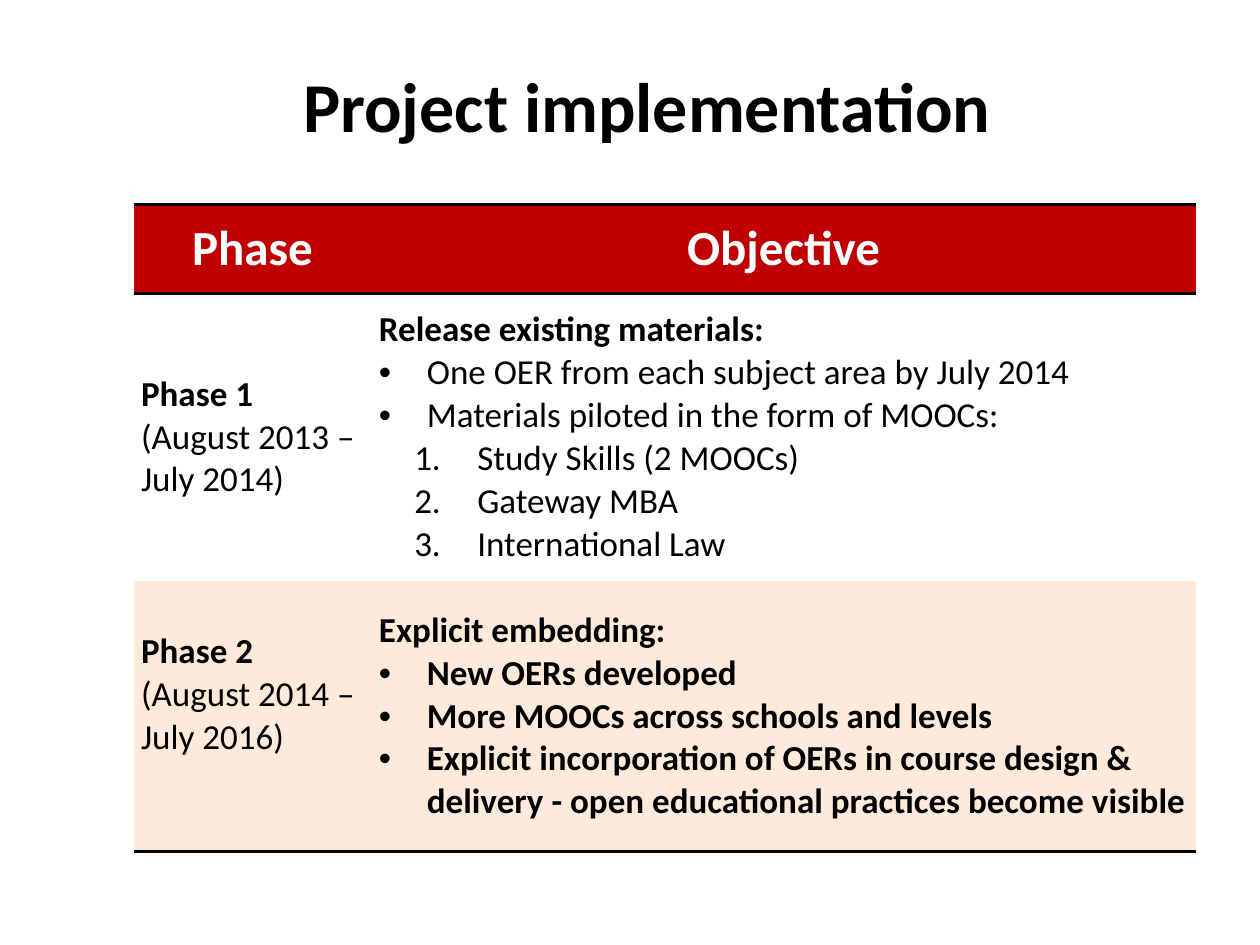
import pptx
import pptx.util
from lxml import etree
from pptx.dml.color import RGBColor
from pptx.enum.text import MSO_ANCHOR, PP_ALIGN
from pptx.oxml.ns import qn

W, H = 10, 7.5
FONT = "Calibri"
BLACK = RGBColor(0x00, 0x00, 0x00)
WHITE = RGBColor(0xFF, 0xFF, 0xFF)
RED = RGBColor(0xC0, 0x00, 0x00)
PEACH = RGBColor(0xFD, 0xEA, 0xDA)
NO_STYLE = "{2D5ABB26-0587-4C30-8999-92F81FD0307C}"

TITLE_BOX = (0.083 * W, 0.059 * H, 0.861 * W, 0.135 * H)
TABLE_BOX = (0.106 * W, 0.216 * H, 0.843 * W, 0.685 * H)
COL_SHARES = (0.224, 0.776)
ROW_SHARES = (0.138, 0.444, 0.418)
MARGINS = {"margin_left": 0.06, "margin_right": 0.06,
           "margin_top": 0.03, "margin_bottom": 0.03}
LINE = 0.34  # height of one body line

# List kind: (level, left indent, hanging indent, bullet tag, bullet attributes)
LISTS = {
    "bullet": (0, 0.38, 0.38, "a:buChar", {"char": "•"}),
    "number": (1, 0.78, 0.5, "a:buAutoNum", {"type": "arabicPeriod"}),
}

# Each paragraph: (text, bold, list kind)
HEADER = [[("Phase", True, None)], [("Objective", True, None)]]
PHASE_1 = [
    [("Phase 1", True, None), ("(August 2013 – July 2014)", False, None)],
    [("Release existing materials:", True, None),
     ("One OER from each subject area by July 2014", False, "bullet"),
     ("Materials piloted in the form of MOOCs:", False, "bullet"),
     ("Study Skills (2 MOOCs)", False, "number"),
     ("Gateway MBA", False, "number"),
     ("International Law", False, "number")],
]
PHASE_2 = [
    [("Phase 2", True, None), ("(August 2014 – July 2016)", False, None)],
    [("Explicit embedding:", True, None),
     ("New OERs developed", True, "bullet"),
     ("More MOOCs across schools and levels", True, "bullet"),
     ("Explicit incorporation of OERs in course design & delivery - "
      "open educational practices become visible", True, "bullet")],
]

# Each row: (cells, fill, text size, text colour, alignment, ruled sides)
ROWS = [
    (HEADER, RED, 28, WHITE, PP_ALIGN.CENTER, ("a:lnT", "a:lnB")),
    (PHASE_1, WHITE, 20, BLACK, PP_ALIGN.LEFT, ()),
    (PHASE_2, PEACH, 20, BLACK, PP_ALIGN.LEFT, ("a:lnB",)),
]


def inches(values):
    return [pptx.util.Inches(v) for v in values]


def add_run(p, text, size, color, bold):
    r = p.add_run()
    r.text = text
    for name, value in {"name": FONT, "size": pptx.util.Pt(size), "bold": bold}.items():
        setattr(r.font, name, value)
    r.font.color.rgb = color


def make_list_item(p, kind):
    level, left, hanging, tag, attributes = LISTS[kind]
    p.level = level
    pPr = p._p.get_or_add_pPr()
    pPr.set("marL", str(pptx.util.Inches(left)))
    pPr.set("indent", str(-pptx.util.Inches(hanging)))
    font = etree.SubElement(pPr, qn("a:buFont"))
    font.set("typeface", "Arial" if kind == "bullet" else "+mj-lt")
    etree.SubElement(pPr, qn(tag), attributes)


def rule_cell(cell, sides):
    """Draw black 2 pt lines on the given sides, ahead of the cell's fill."""
    tcPr = cell._tc.get_or_add_tcPr()
    for i, side in enumerate(sides):
        ln = etree.Element(qn(side), {"w": str(pptx.util.Pt(2))})
        fill = etree.SubElement(ln, qn("a:solidFill"))
        etree.SubElement(fill, qn("a:srgbClr"), {"val": str(BLACK)})
        tcPr.insert(i, ln)


def fill_cell(cell, paragraphs, fill, size, color, align, sides):
    cell.fill.solid()
    cell.fill.fore_color.rgb = fill
    cell.vertical_anchor = MSO_ANCHOR.MIDDLE
    for name, value in MARGINS.items():
        setattr(cell, name, pptx.util.Inches(value))
    tf = cell.text_frame
    for i, (text, bold, kind) in enumerate(paragraphs):
        p = tf.add_paragraph() if i else tf.paragraphs[0]
        p.alignment = align
        if kind:
            make_list_item(p, kind)
        add_run(p, text, size, color, bold)
    rule_cell(cell, sides)


def add_title(s, box, text):
    sp = s.shapes.title
    for name, value in zip(("left", "top", "width", "height"), inches(box)):
        setattr(sp, name, value)
    tf = sp.text_frame
    tf.word_wrap = True
    tf.vertical_anchor = MSO_ANCHOR.TOP
    p = tf.paragraphs[0]
    p.alignment = PP_ALIGN.CENTER
    add_run(p, text, 40, BLACK, True)


def add_phase_table(s, box):
    frame = s.shapes.add_table(len(ROWS), len(COL_SHARES), *inches(box))
    table = frame.table
    table.first_row = table.horz_banding = False
    table._tbl.tblPr.find(qn("a:tableStyleId")).text = NO_STYLE
    for column, share in zip(table.columns, COL_SHARES):
        column.width = pptx.util.Inches(box[2] * share)
    for row, share, (cells, *style) in zip(table.rows, ROW_SHARES, ROWS):
        row.height = pptx.util.Inches(box[3] * share)
        for cell, paragraphs in zip(row.cells, cells):
            fill_cell(cell, paragraphs, *style)
    # The last phase label sits half a line above the middle
    table.cell(2, 0).margin_bottom = pptx.util.Inches(MARGINS["margin_bottom"] + LINE)


def main():
    prs = pptx.Presentation()
    prs.slide_width, prs.slide_height = inches((W, H))
    s = prs.slides.add_slide(prs.slide_layouts[5])
    add_title(s, TITLE_BOX, "Project implementation")
    add_phase_table(s, TABLE_BOX)
    prs.save("out.pptx")


if __name__ == "__main__":
    main()
